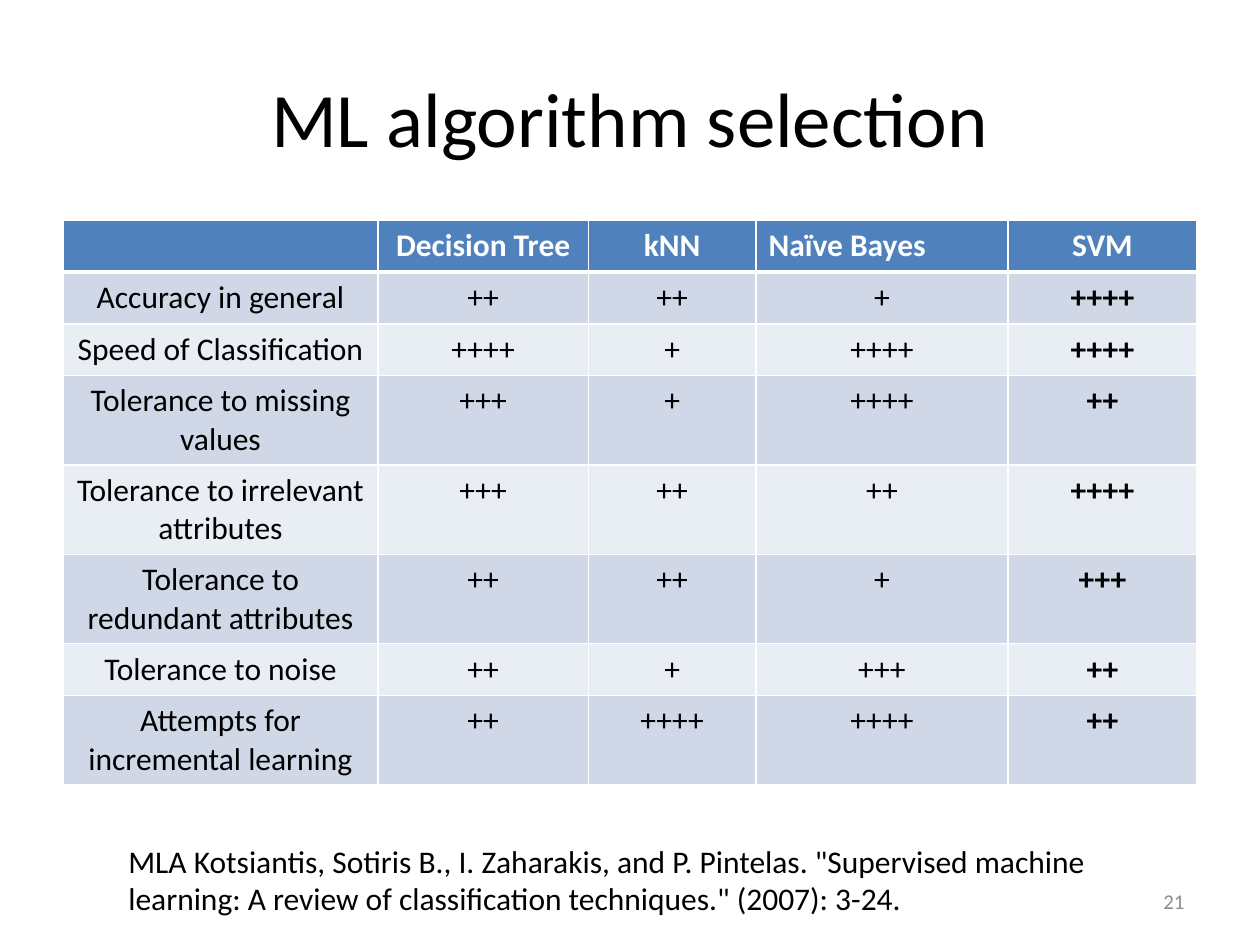
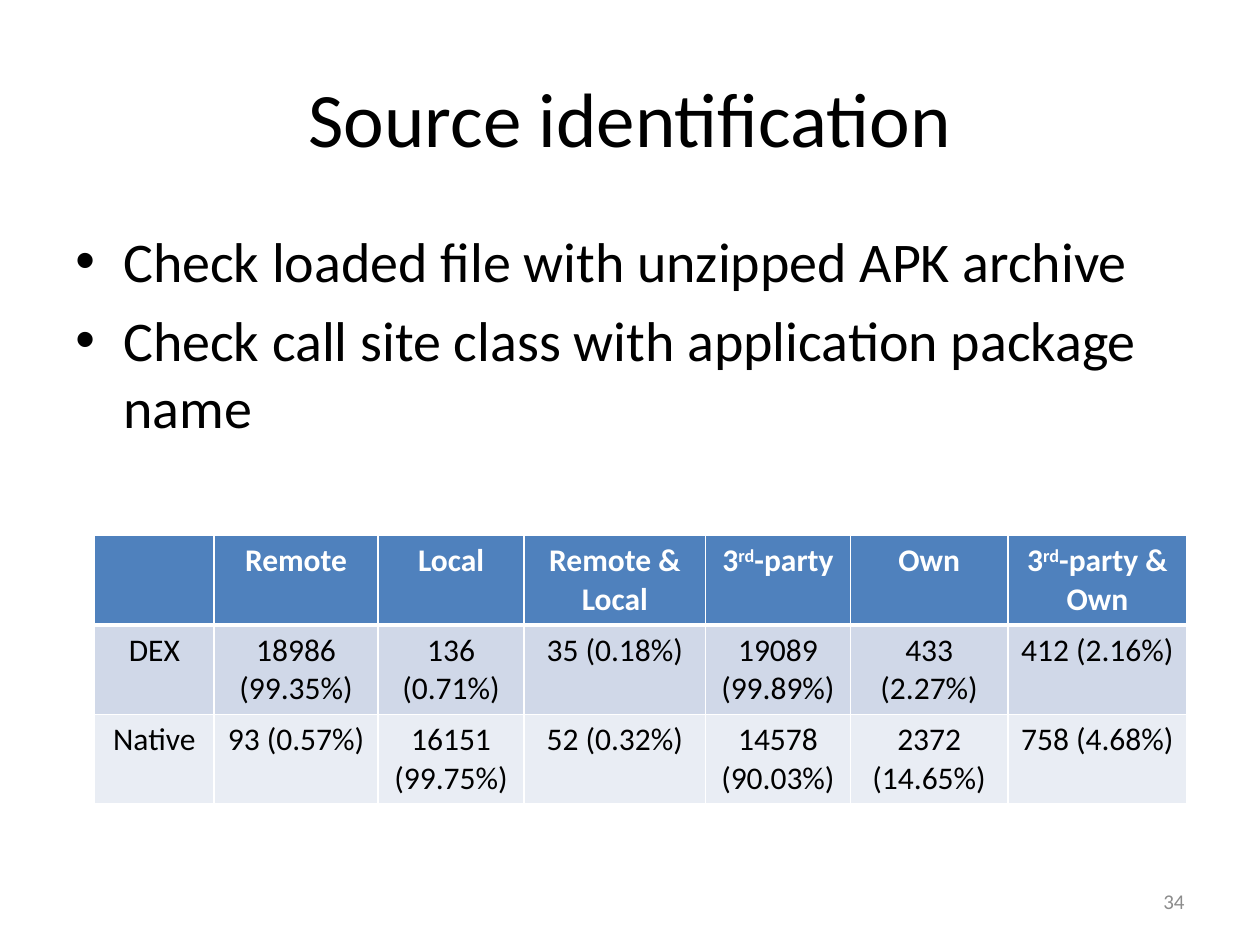
"""Build two slides: an algorithm comparison and a source identification summary."""
from lxml.etree import SubElement
from pptx import Presentation
from pptx.dml.color import RGBColor
from pptx.enum.text import MSO_ANCHOR, PP_ALIGN
from pptx.oxml import parse_xml
from pptx.oxml.ns import nsdecls, qn
from pptx.util import Pt

PX = 9144
FONT = "Calibri"
HUES = {"ink": "000000", "head": "4F81BD", "odd": "D0D8E8",
        "even": "E9EDF4", "line": "FFFFFF", "page": "8C8C8C"}

PAGES = [
    {"title": "ML algorithm selection", "page": "21",
     "at": (50, 175), "cols": [250, 167, 133, 200, 150],
     "tall": [3, 4, 5, 7], "bold": 4, "left": (0, 3),
     "rows": [
         ["", "Decision Tree", "kNN", "Naïve Bayes", "SVM"],
         ["Accuracy in general", "++", "++", "+", "++++"],
         ["Speed of Classification", "++++", "+", "++++", "++++"],
         ["Tolerance to missing values", "+++", "+", "++++", "++"],
         ["Tolerance to irrelevant attributes", "+++", "++", "++", "++++"],
         ["Tolerance to redundant attributes", "++", "++", "+", "+++"],
         ["Tolerance to noise", "++", "+", "+++", "++"],
         ["Attempts for incremental learning", "++", "++++", "++++", "++"]],
     "box": (92, 663, 842, 71), "size": 18, "bullet": False,
     "text": ["MLA Kotsiantis, Sotiris B., I. Zaharakis, and P. Pintelas. "
              "\"Supervised machine learning: A review of classification "
              "techniques.\" (2007): 3-24."]},
    {"title": "Source identification", "page": "34",
     "at": (75, 425), "cols": [95, 130, 116, 144, 115, 125, 142],
     "tall": [0, 1, 2], "bold": None, "left": None,
     "rows": [
         ["", "Remote", "Local", "Remote & Local", "3^rd^-party", "Own",
          "3^rd^-party & Own"],
         ["DEX", "18986 (99.35%)", "136 (0.71%)", "35 (0.18%)",
          "19089 (99.89%)", "433 (2.27%)", "412 (2.16%)"],
         ["Native", "93 (0.57%)", "16151 (99.75%)", "52 (0.32%)",
          "14578 (90.03%)", "2372 (14.65%)", "758 (4.68%)"]],
     "box": (50, 175, 900, 495), "size": 32, "bullet": True,
     "text": ["Check loaded file with unzipped APK archive",
              "Check call site class with application package name"]},
]


def write(par, text, size, hue="ink", bold=False, align=PP_ALIGN.LEFT):
    """Add text to a paragraph, raising the parts between carets."""
    par.alignment = align
    par.font.size = Pt(size)
    for i, part in enumerate(text.split("^")):
        if not part:
            continue
        run = par.add_run()
        run.text = part
        run.font.name, run.font.size, run.font.bold = FONT, Pt(size), bold
        run.font.color.rgb = RGBColor.from_string(HUES[hue])
        if i % 2:
            run.font._element.set("baseline", "30000")


def frame(slide, box):
    """Add a wrapping text box and return its text frame."""
    body = slide.shapes.add_textbox(*[n * PX for n in box]).text_frame
    body.word_wrap = True
    return body


deck = Presentation()
deck.slide_width, deck.slide_height = 1000 * PX, 750 * PX

for page in PAGES:
    slide = deck.slides.add_slide(deck.slide_layouts[5])
    title = slide.shapes.title
    title.left, title.top, title.width, title.height = [
        n * PX for n in (50, 30, 900, 125)]
    title.text_frame.vertical_anchor = MSO_ANCHOR.MIDDLE
    write(title.text_frame.paragraphs[0], page["title"], 44,
          align=PP_ALIGN.CENTER)

    body = frame(slide, page["box"])
    for i, text in enumerate(page["text"]):
        par = body.add_paragraph() if i else body.paragraphs[0]
        if page["bullet"]:
            props = par._p.get_or_add_pPr()
            props.set("marL", str(38 * PX))
            props.set("indent", str(-38 * PX))
            SubElement(props, qn("a:buFont")).set("typeface", "Arial")
            SubElement(props, qn("a:buChar")).set("char", "•")
        if i:
            par.space_before = Pt(6.4)
        write(par, text, page["size"])

    foot = frame(slide, (717, 695, 233, 40))
    foot.vertical_anchor = MSO_ANCHOR.MIDDLE
    write(foot.paragraphs[0], page["page"], 12, "page", align=PP_ALIGN.RIGHT)

    rows, cols = page["rows"], page["cols"]
    highs = [71 if r in page["tall"] else 41 for r in range(len(rows))]
    x, y = page["at"]
    grid = slide.shapes.add_table(len(rows), len(cols), x * PX, y * PX,
                                  sum(cols) * PX, sum(highs) * PX).table
    for col, wide in zip(grid.columns, cols):
        col.width = wide * PX
    for r, row in enumerate(rows):
        grid.rows[r].height = highs[r] * PX
        fill = "head" if r == 0 else "odd" if r % 2 else "even"
        for c, text in enumerate(row):
            cell = grid.cell(r, c)
            cell.fill.solid()
            cell.fill.fore_color.rgb = RGBColor.from_string(HUES[fill])
            thick = {"T": 3 if r == 1 else 1, "B": 3 if r == 0 else 1}
            for i, side in enumerate("LRTB"):
                cell._tc.get_or_add_tcPr().insert(i, parse_xml(
                    f'<a:ln{side} {nsdecls("a")} w="{Pt(thick.get(side, 1))}">'
                    f'<a:solidFill><a:srgbClr val="{HUES["line"]}"/>'
                    f'</a:solidFill></a:ln{side}>'))
            write(cell.text_frame.paragraphs[0], text, 18,
                  "ink" if r else "line", r == 0 or c == page["bold"],
                  PP_ALIGN.LEFT if (r, c) == page["left"] else PP_ALIGN.CENTER)

deck.save("out.pptx")
